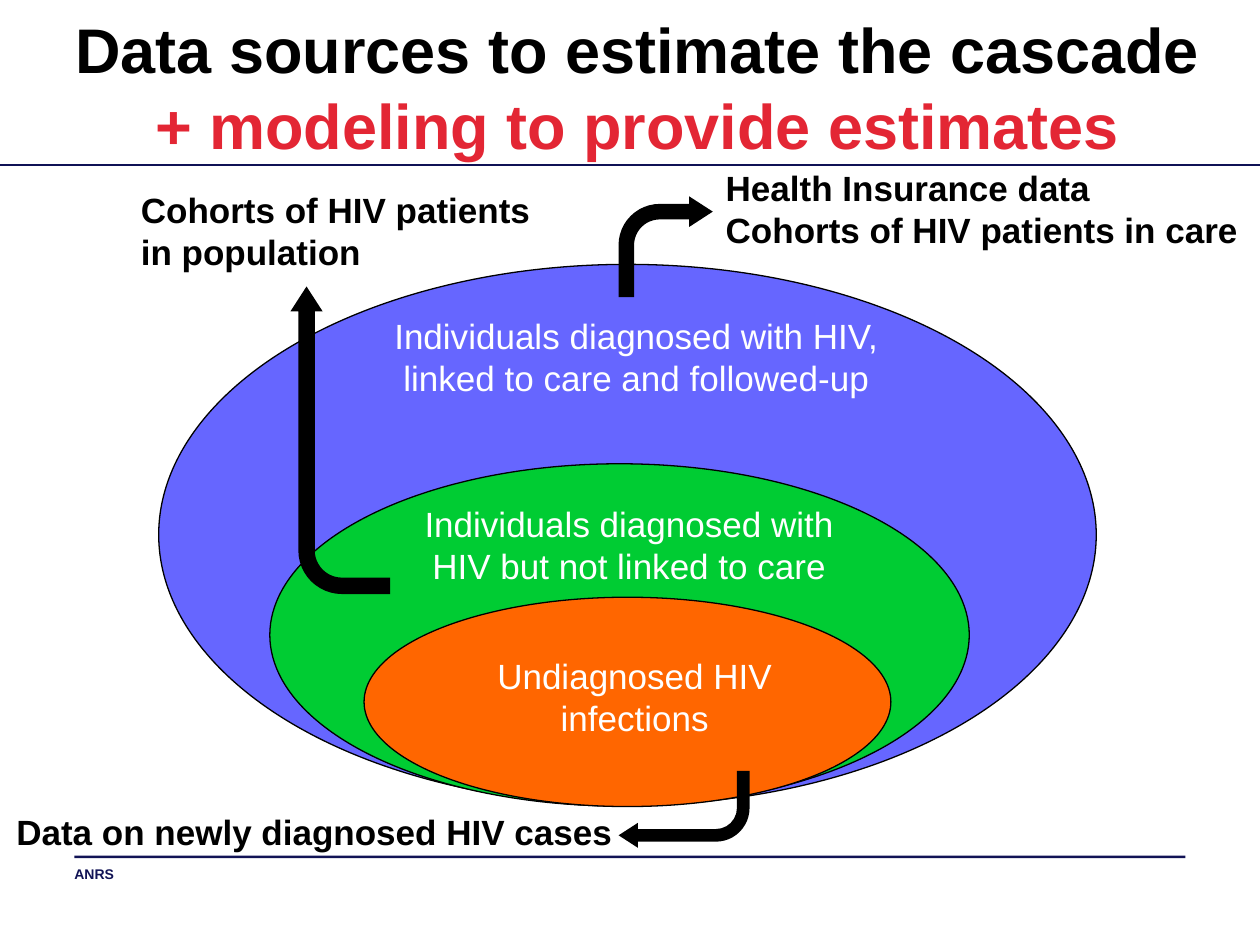
from lxml.etree import SubElement
from pptx import Presentation
from pptx.dml.color import RGBColor
from pptx.enum.shapes import MSO_CONNECTOR as Connector, MSO_SHAPE as Shape
from pptx.enum.text import MSO_ANCHOR as Anchor, MSO_AUTO_SIZE as AutoSize, PP_ALIGN as Align
from pptx.oxml.ns import qn
from pptx.util import Cm, Pt

BLACK = RGBColor(0x00, 0x00, 0x00)
WHITE = RGBColor(0xFF, 0xFF, 0xFF)
RED = RGBColor(0xE3, 0x26, 0x34)
NAVY = RGBColor(0x11, 0x13, 0x55)
RULE_NAVY = RGBColor(0x0F, 0x11, 0x55)
BLUE = RGBColor(0x66, 0x66, 0xFF)
GREEN = RGBColor(0x00, 0xCC, 0x33)
ORANGE = RGBColor(0xFF, 0x66, 0x00)

TITLE = {"size": Pt(36), "bold": True}
GROUP = {"size": Pt(20), "bold": False}
SOURCE = {"size": Pt(20), "bold": True}
FOOTER = {"size": Pt(8), "bold": True}


class CascadeSlide:
    font_name = "Arial"
    arrow_adjustments = (0.165, 0.162, 0.25, 0.438)

    def __init__(self, deck):
        self.page = deck.slides.add_slide(deck.slide_layouts[5])

    def fill_lines(self, frame, lines, style, align):
        """Fill a text frame with (text, colour) lines, one paragraph each."""
        for index, (text, color) in enumerate(lines):
            para = frame.paragraphs[0] if index == 0 else frame.add_paragraph()
            para.alignment = align
            span = para.add_run()
            span.text = text
            for name, value in {"name": self.font_name, **style}.items():
                setattr(span.font, name, value)
            span.font.color.rgb = color

    def title(self, place, lines):
        box = self.page.shapes.title
        box.left, box.top, box.width, box.height = map(Cm, place)
        frame = box.text_frame
        frame.auto_size = AutoSize.NONE
        frame.vertical_anchor = Anchor.MIDDLE
        self.fill_lines(frame, lines, TITLE, Align.CENTER)

    def text(self, place, lines, style, color, align=Align.LEFT, wrap=True, inset=True):
        frame = self.page.shapes.add_textbox(*map(Cm, place)).text_frame
        frame.word_wrap = wrap
        frame.auto_size = AutoSize.SHAPE_TO_FIT_TEXT if inset else AutoSize.NONE
        if not inset:
            for side in ("left", "top", "right", "bottom"):
                setattr(frame, f"margin_{side}", 0)
        self.fill_lines(frame, [(line, color) for line in lines], style, align)

    def shape(self, kind, place, fill, outline=None):
        shape = self.page.shapes.add_shape(kind, *map(Cm, place))
        shape.shadow.inherit = False
        shape.fill.solid()
        shape.fill.fore_color.rgb = fill
        if outline is None:
            shape.line.fill.background()
        else:
            shape.line.color.rgb = outline
            shape.line.width = Pt(0.75)
        return shape

    def arrow(self, place, rotation):
        arrow = self.shape(Shape.BENT_ARROW, place, BLACK)
        arrow.rotation = rotation
        for index, value in enumerate(self.arrow_adjustments):
            arrow.adjustments[index] = value

    def rule(self, left, right, top):
        line = self.page.shapes.add_connector(
            Connector.STRAIGHT, Cm(left), Cm(top), Cm(right), Cm(top))
        line.line.color.rgb = RULE_NAVY
        line.line.width = Pt(1)
        SubElement(line._element.spPr, qn("a:effectLst"))


def main():
    deck = Presentation()
    deck.slide_width, deck.slide_height = Cm(25.4), Cm(19.05)
    slide = CascadeSlide(deck)

    # Footer
    slide.shape(Shape.RECTANGLE, (1.5, 17.25, 22.4, 0.05), NAVY)
    slide.text((1.5, 17.45, 1.09, 1.6), ["ANRS"], FOOTER, NAVY, wrap=False, inset=False)

    # Title
    slide.title((0.2, 0.15, 25.3, 3.18), [
        ("Data sources to estimate the cascade", BLACK),
        ("+ modeling to provide estimates", RED),
    ])

    # Nested patient groups, from outermost to innermost
    groups = [
        ((3.2, 5.33, 18.9, 10.9), BLUE, (7.65, 6.22, 10.36, 1.96), False,
         ["Individuals diagnosed with HIV,", "linked to care and followed-up"]),
        ((5.44, 9.35, 14.1, 6.9), GREEN, (7.87, 10.01, 9.63, 1.96), True,
         ["Individuals diagnosed with HIV but not linked to care"]),
        ((7.34, 12.04, 10.62, 4.22), ORANGE, (8.53, 13.06, 8.53, 1.12), True,
         ["Undiagnosed HIV infections"]),
    ]
    for ellipse, fill, place, wrap, lines in groups:
        slide.shape(Shape.OVAL, ellipse, fill, BLACK)
        slide.text(place, lines, GROUP, WHITE, Align.CENTER, wrap)

    # Data sources, each with the arrow from its group
    sources = [
        ((2.59, 3.68, 11.89, 2.82), ["Cohorts of HIV patients", "in population"],
         (3.76, 7.87, 6.2, 2.01), 270),
        ((0.08, 16.21, 12.78, 1.12), ["Data on newly diagnosed HIV cases"],
         (12.47, 15.54, 2.64, 1.55), 180),
        ((14.38, 3.23, 11.02, 1.96), ["Health Insurance data", "Cohorts of HIV patients in care"],
         (12.47, 3.96, 1.9, 2.03), 0),
    ]
    for place, lines, arrow, rotation in sources:
        slide.text(place, lines, SOURCE, BLACK)
        slide.arrow(arrow, rotation)

    # Line under the title
    slide.rule(0, 25.4, 3.33)

    deck.save("out.pptx")


if __name__ == "__main__":
    main()
